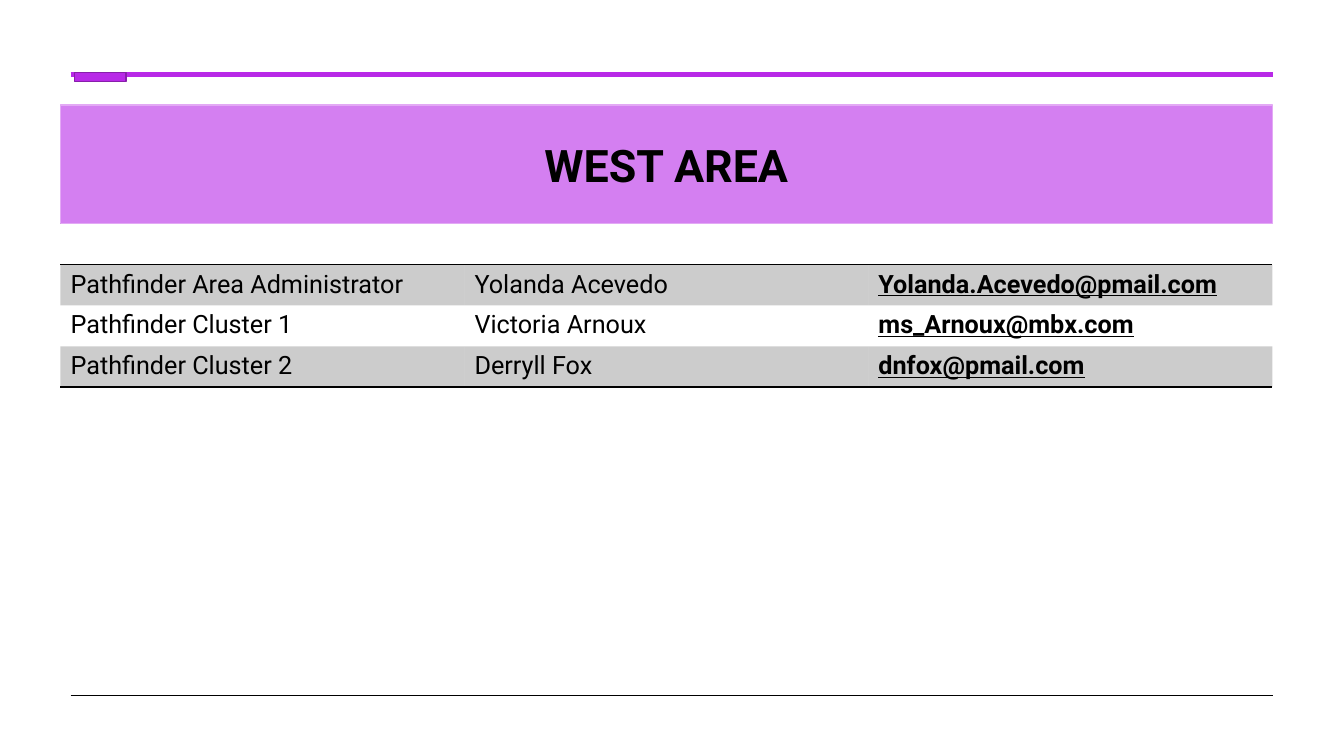
from dataclasses import dataclass

from lxml import etree
from pptx import Presentation
from pptx.dml.color import RGBColor
from pptx.enum.shapes import MSO_CONNECTOR, MSO_SHAPE
from pptx.enum.text import MSO_ANCHOR, PP_ALIGN
from pptx.oxml.ns import qn
from pptx.util import Inches, Pt

STRAIGHT = MSO_CONNECTOR.STRAIGHT
RECTANGLE = MSO_SHAPE.RECTANGLE
MIDDLE = MSO_ANCHOR.MIDDLE
CENTER = PP_ALIGN.CENTER
PLAIN_TABLE_STYLE = "{2D5ABB26-0587-4C30-8999-92F81FD0307C}"


@dataclass(frozen=True)
class Theme:
    font: str = "Roboto"
    black: str = "000000"
    purple: str = "B829E7"
    dark_purple: str = "881EAB"
    banner: str = "D47FF1"
    banner_edge: str = "E3A9F5"
    band_opacity: int = 20
    title_size: int = 32
    body_size: int = 18


THEME = Theme()
CONTACTS = [
    ("Pathfinder Area Administrator", "Yolanda Acevedo", "Yolanda.Acevedo@pmail.com"),
    ("Pathfinder Cluster 1", "Victoria Arnoux", "ms_Arnoux@mbx.com"),
    ("Pathfinder Cluster 2", "Derryll Fox", "dnfox@pmail.com"),
]


def rgb(color):
    return RGBColor.from_string(color)


def format_text(paragraph, size, bold=False, underline=False):
    for run in paragraph.runs:
        run.font.name = THEME.font
        run.font.size = Pt(size)
        run.font.bold = bold
        run.font.underline = underline
        run.font.color.rgb = rgb(THEME.black)


def add_rule(slide, top, color, weight):
    rule = slide.shapes.add_connector(
        STRAIGHT, Inches(0.7), Inches(top), Inches(12.63), Inches(top)
    )
    rule.line.color.rgb = rgb(color)
    rule.line.width = Pt(weight)
    etree.SubElement(rule._element.spPr, qn("a:effectLst"))


def add_box(slide, left, top, width, height, fill, edge):
    box = slide.shapes.add_shape(
        RECTANGLE, Inches(left), Inches(top), Inches(width), Inches(height)
    )
    box.shadow.inherit = False
    box.fill.solid()
    box.fill.fore_color.rgb = rgb(fill)
    box.line.color.rgb = rgb(edge)
    box.line.width = Pt(1)
    return box


def add_banner(slide, title):
    banner = add_box(slide, 0.6, 1.04, 12.02, 1.18, THEME.banner, THEME.banner_edge)
    banner.text_frame.text = title
    banner.text_frame.vertical_anchor = MIDDLE
    paragraph = banner.text_frame.paragraphs[0]
    paragraph.alignment = CENTER
    format_text(paragraph, THEME.title_size, bold=True)


def shade_cell(cell):
    cell.fill.solid()
    cell.fill.fore_color.rgb = rgb(THEME.black)
    color = cell._tc.tcPr.find(".//" + qn("a:srgbClr"))
    etree.SubElement(color, qn("a:alpha"), val=str(THEME.band_opacity * 1000))


def add_cell_borders(cell, sides):
    properties = cell._tc.get_or_add_tcPr()
    for position, side in enumerate(sides):
        border = etree.Element(qn(f"a:ln{side}"), w=str(Pt(1)))
        fill = etree.SubElement(border, qn("a:solidFill"))
        etree.SubElement(fill, qn("a:srgbClr"), val=THEME.black)
        properties.insert(position, border)


def add_contact_table(slide, contacts):
    row_count = len(contacts) + 1
    table = slide.shapes.add_table(
        row_count, 3, Inches(0.6), Inches(2.22), Inches(12.02), Inches(0.405 * row_count)
    ).table
    table.first_row = False
    table.horz_banding = False
    table._tbl.tblPr.find(qn("a:tableStyleId")).text = PLAIN_TABLE_STYLE

    for cell in table.rows[0].cells:
        cell.text_frame.paragraphs[0].font.size = Pt(THEME.body_size)
        add_cell_borders(cell, "TB")

    for row, contact in enumerate(contacts, start=1):
        for column, text in enumerate(contact):
            cell = table.cell(row, column)
            cell.text_frame.text = text
            is_email = column == 2
            format_text(cell.text_frame.paragraphs[0], THEME.body_size, is_email, is_email)
            if row % 2:
                shade_cell(cell)
            if row == len(contacts):
                add_cell_borders(cell, "B")


def main():
    presentation = Presentation()
    presentation.slide_width = Inches(13.33)
    presentation.slide_height = Inches(7.5)
    slide = presentation.slides.add_slide(presentation.slide_layouts[6])
    add_rule(slide, 0.74, THEME.purple, 3)
    add_rule(slide, 6.9, THEME.black, 0.5)
    add_contact_table(slide, CONTACTS)
    add_box(slide, 0.74, 0.72, 0.51, 0.09, THEME.purple, THEME.dark_purple)
    add_banner(slide, "WEST AREA")
    presentation.save("out.pptx")


if __name__ == "__main__":
    main()
